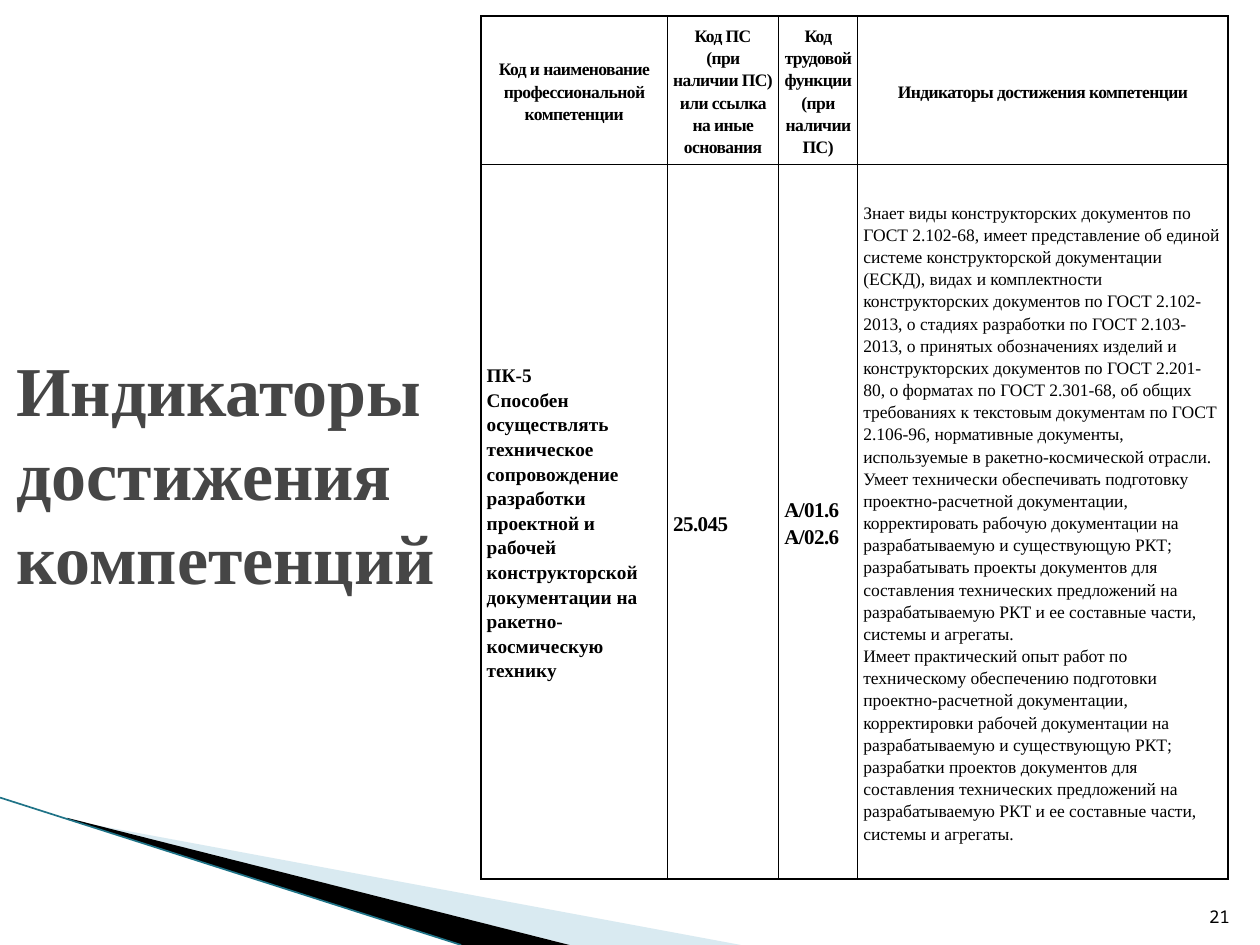
from dataclasses import dataclass

from lxml.etree import SubElement
from pptx import Presentation
from pptx.dml.color import RGBColor
from pptx.enum.shapes import MSO_CONNECTOR
from pptx.enum.text import MSO_ANCHOR, MSO_AUTO_SIZE, PP_ALIGN
from pptx.oxml import parse_xml
from pptx.oxml.ns import nsdecls, qn
from pptx.util import Inches, Pt

SERIF = "Times New Roman"
BLACK = "000000"
COLS, ROWS = 100, 75

prs = Presentation()
prs.slide_width, prs.slide_height = Inches(10), Inches(7.5)


@dataclass(frozen=True)
class Style:
    size: float
    bold: bool = False
    color: str = BLACK
    font: str = SERIF
    spc: float = 0
    align: PP_ALIGN = PP_ALIGN.LEFT
    spacing: float = 1.15


@dataclass(frozen=True)
class Cell:
    style: Style
    lines: tuple[str, ...]


@dataclass(frozen=True)
class Wedge:
    points: tuple[tuple[float, float], ...]
    color: str
    alpha: int = 100


HEAD = Style(10, bold=True, spc=-0.3, align=PP_ALIGN.CENTER)
SKILL = Style(11, bold=True)
CODE = Style(12, bold=True, spc=-0.3)
BODY = Style(10)
TITLE = Style(40, bold=True, color="464646", spacing=1.0)
NUMBER = Style(10, font="Noto Sans Mono", align=PP_ALIGN.RIGHT, spacing=1.0)

COL_WIDTHS = (14.8, 8.82, 6.28, 29.4)
ROW_HEIGHTS = (11.8, 56.7)
TABLE = (
    (
        Cell(HEAD, ("Код и наименование профессиональной компетенции",)),
        Cell(HEAD, ("Код ПС", "(при наличии ПС)", "или ссылка на иные основания")),
        Cell(HEAD, ("Код трудовой функции (при наличии ПС)",)),
        Cell(HEAD, ("Индикаторы достижения компетенции",)),
    ),
    (
        Cell(SKILL, (
            "ПК-5",
            "Способен осуществлять техническое сопровождение разработки проектной "
            "и рабочей конструкторской документации на ракетно-космическую технику",
        )),
        Cell(CODE, ("25.045",)),
        Cell(CODE, ("A/01.6", "A/02.6")),
        Cell(BODY, (
            "Знает виды конструкторских документов по ГОСТ 2.102-68, имеет "
            "представление об единой системе конструкторской документации (ЕСКД), "
            "видах и комплектности конструкторских документов по ГОСТ 2.102-2013, "
            "о стадиях разработки по ГОСТ 2.103-2013, о принятых обозначениях "
            "изделий и конструкторских документов по ГОСТ 2.201-80, о форматах по "
            "ГОСТ 2.301-68, об общих требованиях к текстовым документам по ГОСТ "
            "2.106-96, нормативные документы, используемые в ракетно-космической "
            "отрасли.",
            "Умеет технически обеспечивать подготовку проектно-расчетной "
            "документации, корректировать рабочую документации на разрабатываемую "
            "и существующую РКТ; разрабатывать проекты документов для составления "
            "технических предложений на разрабатываемую РКТ и ее составные части, "
            "системы и агрегаты.",
            "Имеет практический опыт работ по техническому обеспечению подготовки "
            "проектно-расчетной документации, корректировки рабочей документации "
            "на разрабатываемую и существующую РКТ; разрабатки проектов документов "
            "для составления технических предложений на разрабатываемую РКТ и ее "
            "составные части, системы и агрегаты.",
        )),
    ),
)
WEDGES = (
    Wedge(((5.5, 65.1), (58.8, 75), (45.2, 75), (5.5, 65)), "A0CBDC", 40),
    Wedge(((5.3, 64.9), (45.2, 75), (36.6, 75), (5.4, 65)), BLACK),
)


def x(cols: float) -> int:
    return round(prs.slide_width * cols / COLS)


def y(rows: float) -> int:
    return round(prs.slide_height * rows / ROWS)


def rgb(color: str) -> RGBColor:
    return RGBColor.from_string(color)


def write(tf, style: Style, lines: tuple[str, ...]) -> None:
    tf.word_wrap = True
    for i, line in enumerate(lines):
        p = tf.add_paragraph() if i else tf.paragraphs[0]
        p.alignment, p.line_spacing = style.align, style.spacing
        r = p.add_run()
        r.text = line
        r.font.name, r.font.size = style.font, Pt(style.size)
        r.font.bold = style.bold
        r.font.color.rgb = rgb(style.color)
        if style.spc:
            r._r.get_or_add_rPr().set("spc", str(round(style.spc * 100)))


def add_wedge(s, wedge: Wedge) -> None:
    start, *rest = [(x(px), y(py)) for px, py in wedge.points]
    builder = s.shapes.build_freeform(*start)
    builder.add_line_segments(rest)
    sp = builder.convert_to_shape()
    sp.shadow.inherit = False
    sp.line.fill.background()
    sp.fill.solid()
    sp.fill.fore_color.rgb = rgb(wedge.color)
    if wedge.alpha < 100:
        clr = sp._element.spPr.find(f"{qn('a:solidFill')}/{qn('a:srgbClr')}")
        SubElement(clr, qn("a:alpha")).set("val", str(wedge.alpha * 1000))


def add_edge(s, color: str) -> None:
    line = s.shapes.add_connector(MSO_CONNECTOR.STRAIGHT, x(0), y(63.3), x(36.6), y(75))
    line.line.color.rgb = rgb(color)
    line.line.width = Pt(0.95)
    SubElement(line._element.spPr, qn("a:effectLst"))


def add_borders(cell, color: str, width: float) -> None:
    tcPr = cell._tc.get_or_add_tcPr()
    for i, side in enumerate("LRTB"):
        tcPr.insert(i, parse_xml(
            f'<a:ln{side} {nsdecls("a")} w="{Pt(width)}"><a:solidFill>'
            f'<a:srgbClr val="{color}"/></a:solidFill></a:ln{side}>'
        ))


def add_competence_table(s) -> None:
    frame = s.shapes.add_table(
        len(ROW_HEIGHTS), len(COL_WIDTHS),
        x(38.17), y(1.25), x(sum(COL_WIDTHS)), y(sum(ROW_HEIGHTS)),
    )
    table = frame.table
    table.first_row = table.horz_banding = False
    for col, width in zip(table.columns, COL_WIDTHS):
        col.width = x(width)
    for row, height, cells in zip(table.rows, ROW_HEIGHTS, TABLE):
        row.height = y(height)
        for cell, content in zip(row.cells, cells):
            cell.vertical_anchor = MSO_ANCHOR.MIDDLE
            cell.margin_left = cell.margin_right = Pt(3.3)
            cell.margin_top, cell.margin_bottom = Inches(0.01), 0
            cell.fill.background()
            add_borders(cell, BLACK, 1)
            write(cell.text_frame, content.style, content.lines)


def main() -> None:
    s = prs.slides.add_slide(prs.slide_layouts[5])
    for wedge in WEDGES:
        add_wedge(s, wedge)
    add_edge(s, "1F7387")

    title = s.shapes.title
    title.left, title.top, title.width, title.height = x(0.3), y(13.9), x(36.3), y(47.2)
    title.text_frame.auto_size = MSO_AUTO_SIZE.NONE
    title.text_frame.vertical_anchor = MSO_ANCHOR.MIDDLE
    write(title.text_frame, TITLE, ("Индикаторы достижения компетенций",))

    number = s.shapes.add_textbox(x(94.6), y(70.1), x(4), y(4))
    number.text_frame.vertical_anchor = MSO_ANCHOR.BOTTOM
    write(number.text_frame, NUMBER, ("21",))

    add_competence_table(s)
    prs.save("out.pptx")


if __name__ == "__main__":
    main()
